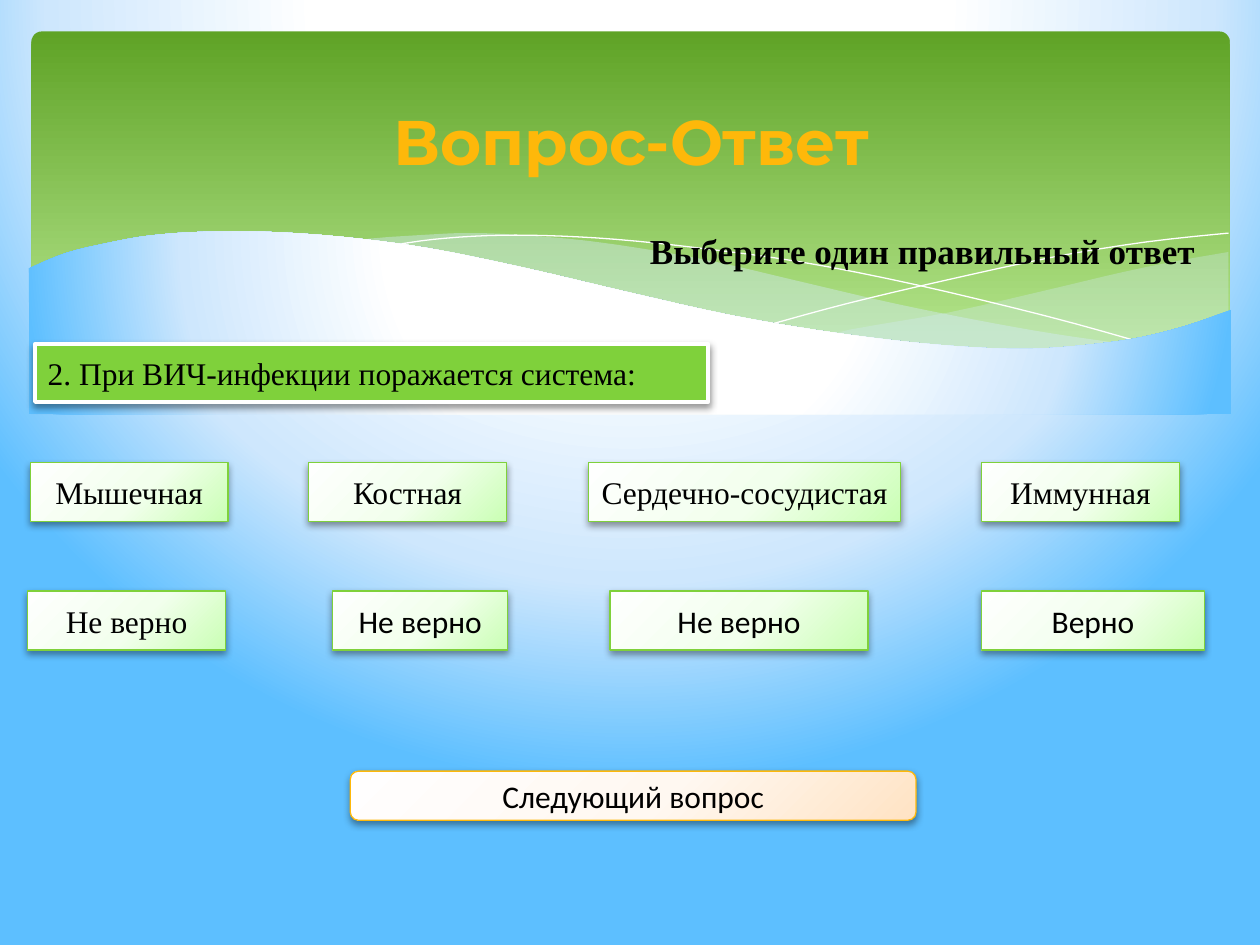
from dataclasses import dataclass
from pptx import Presentation
from pptx.dml.color import RGBColor as Rgb
from pptx.enum.shapes import MSO_SHAPE as Kind
from pptx.enum.text import MSO_ANCHOR as Anchor, PP_ALIGN as Align
from pptx.oxml import parse_xml as to_xml
from pptx.oxml.ns import nsdecls, qn
from pptx.util import Inches, Pt

COLS, ROWS = 10, 7.5
CELL = Inches(1)


@dataclass(frozen=True)
class Theme:
    ink: str = "000000"
    white: str = "FFFFFF"
    green: str = "7FD13B"
    gold: str = "FEB80A"
    mist: str = "D6ECFF"
    sky: tuple = ((40, "FFFFFF"), (74, "CEE7FD"), (100, "5DBFFF"))
    grass: tuple = ((0, "5FA326"), (90, "B2E389"))
    mint: tuple = ((0, "FEFFFE"), (55, "F2FFED"), (100, "CAFFB4"))
    peach: tuple = ((0, "FFFEFE"), (55, "FFF8F1"), (100, "FFE3C4"))
    serif: str = "Times New Roman"
    sans: str = "Calibri"
    head: str = "Montserrat"
    big: int = 36
    mid: int = 20
    small: int = 18


T = Theme()
TOP = (20, -40, 20, 140)
CORNER = (-40, -90, 140, 190)

BAND = [(9.75, 2), (9.35, 2.07), (8.91, 2.16), (8.32, 2.3), (7.53, 2.48), (6.61, 2.65),
        (7.05, 2.71), (7.57, 2.76), (8.03, 2.78), (8.54, 2.76), (8.97, 2.7),
        (9.35, 2.62), (9.75, 2.47)]
SWELL = [(8.93, 2.73), (8.37, 2.65), (7.75, 2.54), (7.06, 2.4), (6.29, 2.22),
         (5.69, 2.08), (5.14, 1.98), (4.65, 1.91), (4.2, 1.87), (3.8, 1.85),
         (3.44, 1.86), (2.86, 1.91), (3.42, 1.99), (4.04, 2.11), (4.91, 2.32),
         (5.66, 2.48), (6.34, 2.61), (6.95, 2.7), (7.48, 2.76), (8.07, 2.78),
         (8.57, 2.77)]
FALL = [(3.09, 1.95), (3.44, 1.9), (3.87, 1.87), (4.33, 1.87), (4.89, 1.9),
        (5.56, 1.97), (6.36, 2.08), (7.27, 2.26), (8.31, 2.51), (9.07, 2.72)]
RISE = [(6.13, 2.57), (6.72, 2.41), (7.48, 2.23), (8.36, 2.04), (9.1, 1.92), (9.75, 1.85)]
WAVE = [(9.77, 2.46), (9.4, 2.59), (8.99, 2.69), (8.5, 2.75), (8.09, 2.77),
        (7.61, 2.75), (7.08, 2.7), (6.48, 2.62), (5.79, 2.5), (5.03, 2.33),
        (4.18, 2.13), (3.4, 1.97), (2.71, 1.88), (2.11, 1.84), (1.61, 1.84),
        (1.19, 1.87), (0.85, 1.93), (0.52, 2.01), (0.23, 2.13)]
ANSWERS = [("Мышечная", 0.24, 1.57), ("Костная", 2.45, 1.57),
           ("Сердечно-сосудистая", 4.67, 2.48), ("Иммунная", 7.79, 1.57)]
MARKS = [("Не верно", 0.22, 1.57, T.serif), ("Не верно", 2.64, 1.39, T.sans),
         ("Не верно", 4.84, 2.05, T.sans), ("Верно", 7.79, 1.77, T.sans)]


def grid(*cells):
    return [round(c * CELL) for c in cells]


def blend(props, stops, focus=None):
    marks = "".join(f'<a:gs pos="{p * 1000}"><a:srgbClr val="{c}"/></a:gs>' for p, c in stops)
    way = '<a:lin ang="5400000" scaled="0"/>'
    if focus:
        edges = " ".join(f'{k}="{v * 1000}"' for k, v in zip("ltrb", focus))
        way = f'<a:path path="circle"><a:fillToRect {edges}/></a:path>'
    grad = to_xml(f'<a:gradFill {nsdecls("a")} rotWithShape="1">'
                  f'<a:gsLst>{marks}</a:gsLst>{way}</a:gradFill>')
    props.replace(props.find(qn("a:solidFill")), grad)


def paint(shape, fill=None, focus=None, alpha=None, line=None, width=0.75):
    shape.shadow.inherit = False
    props = shape.element.spPr
    if fill is None:
        shape.fill.background()
    else:
        shape.fill.solid()
        if isinstance(fill, str):
            shape.fill.fore_color.rgb = Rgb.from_string(fill)
        else:
            blend(props, fill, focus)
    if alpha:
        props.find(qn("a:solidFill"))[0].append(
            to_xml(f'<a:alpha {nsdecls("a")} val="{alpha * 1000}"/>'))
    if line:
        shape.line.color.rgb = Rgb.from_string(line)
        shape.line.width = Pt(width)
    else:
        shape.line.fill.background()


def cast(shape):
    shape.element.spPr.find(qn("a:effectLst")).append(to_xml(
        f'<a:outerShdw {nsdecls("a")} blurRad="{Pt(4.1)}" dist="{Pt(2)}" dir="5400000" '
        'rotWithShape="0"><a:srgbClr val="000000"><a:alpha val="40000"/></a:srgbClr></a:outerShdw>'))


def write(shape, text, font=T.serif, size=T.small, color=T.ink, bold=False,
          align=Align.CENTER, anchor=Anchor.MIDDLE, wrap=True):
    frame = shape.text_frame
    frame.word_wrap = wrap
    frame.vertical_anchor = anchor
    para = frame.paragraphs[0]
    para.alignment = align
    run = para.add_run()
    run.text = text
    run.font.name, run.font.size, run.font.bold = font, Pt(size), bold
    run.font.color.rgb = Rgb.from_string(color)


def smooth(knots, steps=4):
    ends = [knots[0], *knots, knots[-1]]
    dots = [knots[0]]
    for a, b, c, d in zip(ends, ends[1:], ends[2:], ends[3:]):
        for n in range(1, steps + 1):
            t = n / steps
            dots.append(tuple(
                (2 * q + (r - p) * t + (2 * p - 5 * q + 4 * r - s) * t ** 2
                 + (3 * q - p - 3 * r + s) * t ** 3) / 2
                for p, q, r, s in zip(a, b, c, d)))
    return dots


def curve(slide, knots, base=(), close=True, **look):
    dots = [grid(*dot) for dot in [*smooth(knots), *base]]
    pen = slide.shapes.build_freeform(*dots[0])
    pen.add_line_segments(dots[1:], close=close)
    paint(pen.convert_to_shape(), **look)


def box(slide, text, x, y, w, h, kind=Kind.RECTANGLE, fill=T.mint, focus=CORNER,
        line=T.green, width=0.75, **form):
    shape = slide.shapes.add_shape(kind, *grid(x, y, w, h))
    paint(shape, fill, focus, line=line, width=width)
    cast(shape)
    write(shape, text, **form)


def scene(slide):
    slide.background.fill.solid()
    blend(next(slide.element.iter(qn("p:bgPr"))), T.sky, TOP)
    panel = slide.shapes.add_shape(Kind.ROUNDED_RECTANGLE, *grid(0.25, 0.25, 9.51, 2.7))
    panel.adjustments[0] = 0.03
    paint(panel, T.grass)
    curve(slide, BAND, fill=T.mist, alpha=29)
    curve(slide, SWELL, fill=T.mist, alpha=40)
    for knots in (FALL, RISE):
        curve(slide, knots, close=False, line=T.white, width=0)
    curve(slide, WAVE, base=[(0.23, 3.29), (9.77, 3.29)], fill=T.sky, focus=TOP)


def heading(slide):
    title = slide.shapes.title
    title.left, title.top, title.width, title.height = grid(0.51, 0.6, 9, 1.02)
    title.element.getparent().append(title.element)
    write(title, "Вопрос-Ответ", font=T.head, size=T.big, color=T.gold, bold=True)
    hint = slide.shapes.add_textbox(*grid(5.06, 1.77, 4.65, 0.44))
    write(hint, "Выберите один правильный ответ", size=T.mid, bold=True,
          align=Align.LEFT, anchor=Anchor.TOP, wrap=False)


def main():
    deck = Presentation()
    deck.slide_width, deck.slide_height = grid(COLS, ROWS)
    slide = deck.slides.add_slide(deck.slide_layouts[5])
    scene(slide)
    heading(slide)
    box(slide, "2. При ВИЧ-инфекции поражается система:", 0.28, 2.73, 5.34, 0.46,
        fill=T.green, line=T.white, width=2.5, align=Align.LEFT)
    for text, x, w in ANSWERS:
        box(slide, text, x, 3.67, w, 0.47)
    for text, x, w, font in MARKS:
        box(slide, text, x, 4.69, w, 0.47, font=font)
    box(slide, "Следующий вопрос", 2.78, 6.12, 4.49, 0.39, kind=Kind.ROUNDED_RECTANGLE,
        fill=T.peach, line=T.gold, font=T.sans)
    deck.save("out.pptx")


if __name__ == "__main__":
    main()
